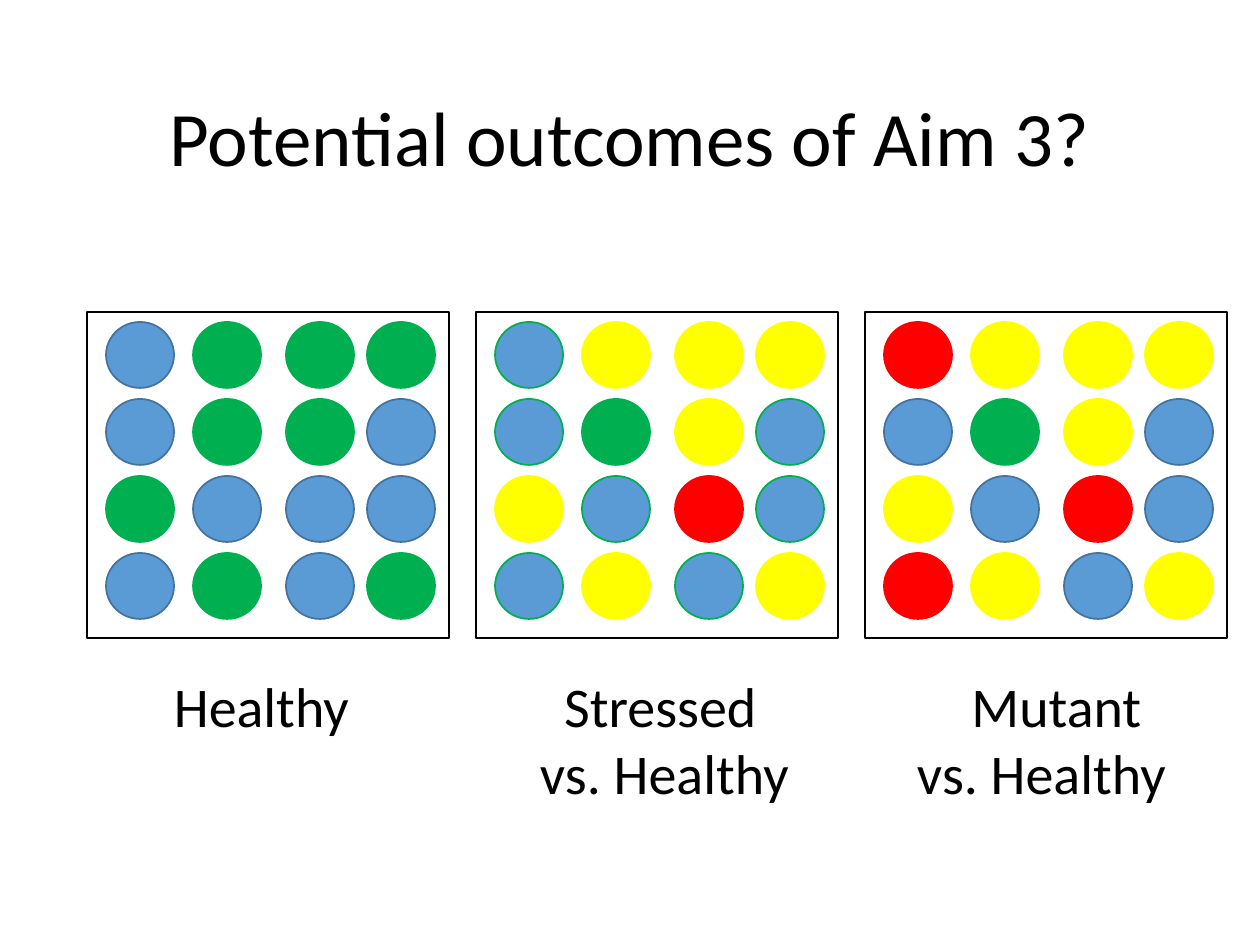
from lxml.etree import SubElement
from pptx import Presentation
from pptx.dml.color import RGBColor
from pptx.enum.shapes import MSO_SHAPE as Shape
from pptx.enum.text import MSO_ANCHOR as Anchor, PP_ALIGN as Align
from pptx.oxml.ns import qn
from pptx.util import Emu, Pt

SCALE = 914400 / 126
PANEL_LEFT, PANEL_TOP, PANEL_PITCH = 87, 312, 389
PANEL_WIDTH, PANEL_HEIGHT = 362, 326
DOT_WIDTH, DOT_HEIGHT = 68, 66
COLUMN_OFFSETS = (19, 106, 199, 280)
ROW_OFFSET, ROW_PITCH = 10, 77
FILLS = {"B": "5B9BD5", "G": "00B050", "Y": "FFFF00", "R": "FF0000"}
DARK_BLUE = "43739E"
PANELS = [
    (("BGGG", "BGGB", "GBBB", "BGBG"), DARK_BLUE),
    (("BYYY", "BGYB", "YBRB", "BYBY"), FILLS["G"]),
    (("RYYY", "BGYB", "YBRB", "RYBY"), DARK_BLUE),
]
CAPTIONS = [
    ("\tHealthy\tStressed\tMutant", (162, 561, 957)),
    ("\tvs. Healthy\tvs. Healthy", (565, 942)),
]


def px(length):
    """Turn pixels into EMU."""
    return Emu(round(length * SCALE))


def color(value):
    """Turn a hex string into a colour."""
    return RGBColor.from_string(value)


def add_outlined(shapes, kind, bounds, fill, line, weight):
    """Add a filled preset shape with an outline."""
    shape = shapes.add_shape(kind, *map(px, bounds))
    shape.shadow.inherit = False
    shape.fill.solid()
    shape.fill.fore_color.rgb = color(fill)
    shape.line.color.rgb = color(line)
    shape.line.width = Pt(weight)


def add_panel(page, left, rows, blue_line):
    """Add a framed grid of dots as one group."""
    shapes = page.shapes.add_group_shape().shapes
    frame = (left, PANEL_TOP, PANEL_WIDTH, PANEL_HEIGHT)
    add_outlined(shapes, Shape.RECTANGLE, frame, "FFFFFF", "000000", 1.5)
    for row, codes in enumerate(rows):
        top = PANEL_TOP + ROW_OFFSET + row * ROW_PITCH
        for offset, code in zip(COLUMN_OFFSETS, codes):
            line = blue_line if code == "B" else FILLS[code]
            bounds = (left + offset, top, DOT_WIDTH, DOT_HEIGHT)
            add_outlined(shapes, Shape.OVAL, bounds, FILLS[code], line, 1)


def add_box(page, bounds, anchor=Anchor.TOP):
    """Add a wrapping text box and return its text frame."""
    frame = page.shapes.add_textbox(*map(px, bounds)).text_frame
    frame.word_wrap = True
    frame.vertical_anchor = anchor
    return frame


def write(para, text, size, align=Align.LEFT, spacing=None):
    """Write one formatted run into a paragraph."""
    para.alignment = align
    para.line_spacing = spacing
    span = para.add_run()
    span.text = text
    span.font.name = "Calibri"
    span.font.size = Pt(size)
    span.font.color.rgb = color("000000")


def add_center_tabs(para, stops):
    """Give a paragraph centred tab stops."""
    tabs = SubElement(para._p.get_or_add_pPr(), qn("a:tabLst"))
    for stop in stops:
        SubElement(tabs, qn("a:tab"), pos=str(px(stop)), algn="ctr")


def main():
    """Build and save the slide."""
    deck = Presentation()
    deck.slide_width, deck.slide_height = px(1260), px(945)
    page = deck.slides.add_slide(deck.slide_layouts[6])

    title = add_box(page, (87, 50, 1086, 183), Anchor.MIDDLE)
    write(title.paragraphs[0], "Potential outcomes of Aim 3?", 44,
          align=Align.CENTER, spacing=0.9)

    for index, (rows, blue_line) in enumerate(PANELS):
        add_panel(page, PANEL_LEFT + index * PANEL_PITCH, rows, blue_line)

    captions = add_box(page, (87, 665, 1126, 149))
    for index, (text, stops) in enumerate(CAPTIONS):
        para = captions.add_paragraph() if index else captions.paragraphs[0]
        write(para, text, 32)
        add_center_tabs(para, stops)

    deck.save("out.pptx")


if __name__ == "__main__":
    main()
